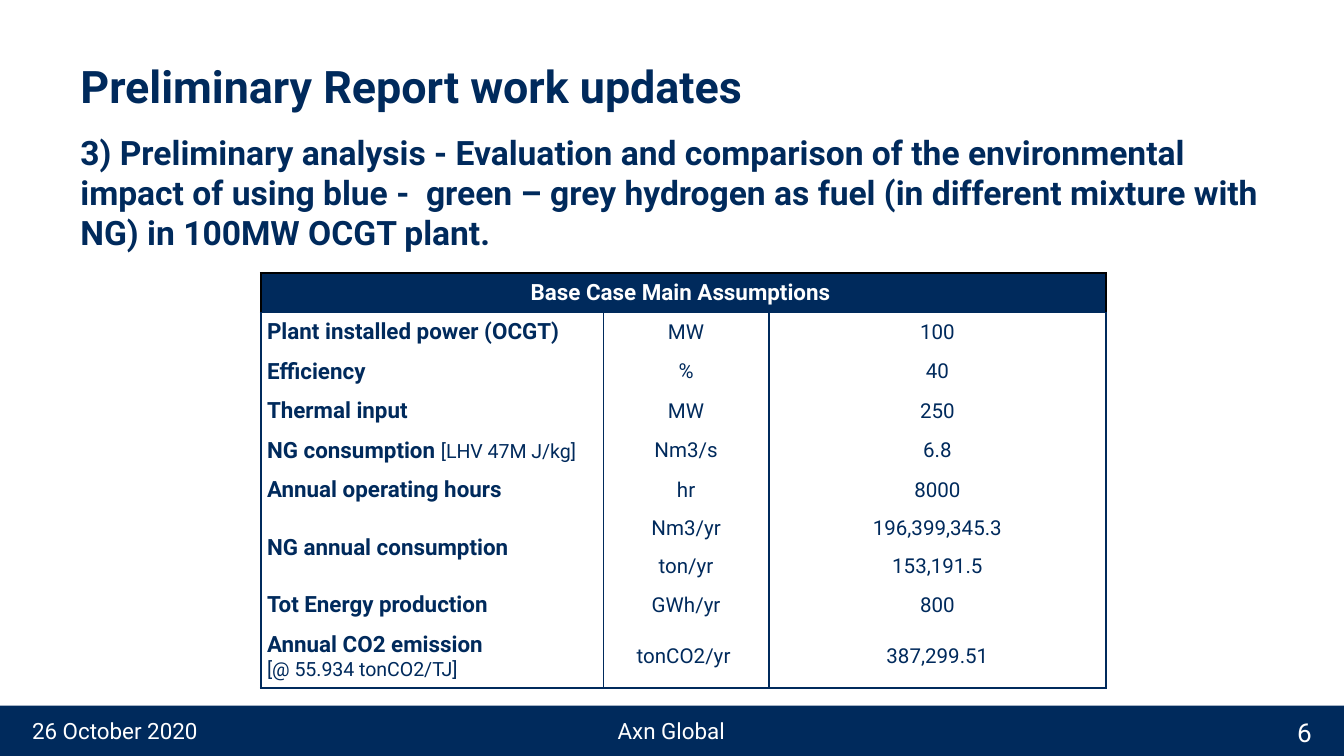
from lxml.etree import SubElement
from pptx import Presentation
from pptx.dml.color import RGBColor
from pptx.enum.shapes import MSO_SHAPE
from pptx.enum.text import MSO_ANCHOR, PP_ALIGN
from pptx.oxml.ns import qn
from pptx.util import Inches, Pt

FONT = "Roboto"
COLORS = {"navy": "002A5C", "white": "FFFFFF", "black": "000000"}

COLUMN_WIDTHS = [2.55, 1.23, 2.51]
ROW_HEIGHTS = [0.29] * 6 + [0.28] * 2 + [0.29, 0.47]
CELL_MARGIN = Pt(3.4)
TABLE_TITLE = "Base Case Main Assumptions "
# Label paragraphs (each a pair of bold text and plain text), unit, value
ASSUMPTIONS = [
    ([("Plant installed power (OCGT)", "")], "MW", "100"),
    ([("Efficiency", "")], "%", "40"),
    ([("Thermal input", "")], "MW", "250"),
    ([("NG consumption ", "[LHV 47M J/kg]")], "Nm3/s", "6.8"),
    ([("Annual operating hours", "")], "hr", "8000"),
    ([("NG annual consumption", "")], "Nm3/yr", "196,399,345.3"),
    ([], "ton/yr", "153,191.5"),
    ([("Tot Energy production", "")], "GWh/yr", "800"),
    ([("Annual CO2 emission", ""), ("", "[@ 55.934 tonCO2/TJ]")],
     "tonCO2/yr ", "387,299.51"),
]


def color(name):
    return RGBColor.from_string(COLORS[name])


def style_font(font, size, color_name="navy", bold=False):
    font.name = FONT
    font.size = Pt(size)
    font.bold = bold
    font.color.rgb = color(color_name)


def add_text(page, text, left, top, width, height, size, color_name="navy",
             bold=False, align=PP_ALIGN.LEFT, anchor=MSO_ANCHOR.MIDDLE):
    box = page.shapes.add_textbox(Inches(left), Inches(top), Inches(width), Inches(height))
    frame = box.text_frame
    frame.word_wrap = True
    frame.vertical_anchor = anchor
    para = frame.paragraphs[0]
    para.text = text
    para.alignment = align
    style_font(para.font, size, color_name, bold)


def add_footer(page):
    bar = page.shapes.add_shape(MSO_SHAPE.RECTANGLE, 0, Inches(5.25), Inches(10), Inches(0.38))
    bar.shadow.inherit = False
    bar.fill.solid()
    bar.fill.fore_color.rgb = color("navy")
    bar.line.fill.background()
    add_text(page, "Axn Global", 3.83, 5.25, 2.33, 0.37, 12, "white", align=PP_ALIGN.CENTER)
    add_text(page, "26 October 2020", 0.14, 5.25, 3.6, 0.37, 12, "white")
    add_text(page, "6", 7.33, 5.26, 2.53, 0.37, 14, "white", align=PP_ALIGN.RIGHT)


def set_borders(cell, borders):
    """Draw the sides named in borders (side: color name) and clear the others."""
    properties = cell._tc.get_or_add_tcPr()
    for side in "LRTB":
        line = SubElement(properties, qn(f"a:ln{side}"), w=str(Pt(1)))
        if side in borders:
            fill = SubElement(line, qn("a:solidFill"))
            SubElement(fill, qn("a:srgbClr"), val=COLORS[borders[side]])
        else:
            SubElement(line, qn("a:noFill"))


def format_cell(cell, borders, fill=None):
    cell.vertical_anchor = MSO_ANCHOR.MIDDLE
    cell.margin_left = cell.margin_right = CELL_MARGIN
    cell.margin_top = cell.margin_bottom = CELL_MARGIN
    set_borders(cell, borders)
    if fill:
        cell.fill.solid()
        cell.fill.fore_color.rgb = color(fill)
    else:
        cell.fill.background()


def write_centered(cell, text, size, color_name="navy", bold=False):
    para = cell.text_frame.paragraphs[0]
    para.text = text
    para.alignment = PP_ALIGN.CENTER
    style_font(para.font, size, color_name, bold)


def write_label(cell, lines):
    frame = cell.text_frame
    for index, (name, note) in enumerate(lines):
        para = frame.add_paragraph() if index else frame.paragraphs[0]
        for text, size, bold in ((name, 12, True), (note, 10.5, False)):
            if text:
                span = para.add_run()
                span.text = text
                style_font(span.font, size, bold=bold)


def add_assumptions_table(page):
    frame = page.shapes.add_table(
        len(ROW_HEIGHTS), len(COLUMN_WIDTHS), Inches(1.94), Inches(2.03),
        Inches(sum(COLUMN_WIDTHS)), Inches(sum(ROW_HEIGHTS)))
    table = frame.table
    table.first_row = table.horz_banding = False
    for column, width in zip(table.columns, COLUMN_WIDTHS):
        column.width = Inches(width)
    for row, height in zip(table.rows, ROW_HEIGHTS):
        row.height = Inches(height)

    # Header across all columns
    header_borders = {"L": "black", "R": "black", "T": "black", "B": "navy"}
    for cell in table.rows[0].cells:
        format_cell(cell, header_borders, "navy")
    table.cell(0, 0).merge(table.cell(0, 2))
    write_centered(table.cell(0, 0), TABLE_TITLE, 12, "white", True)

    # Body rows: vertical rules throughout, horizontal ones at the ends only
    for index, (label, unit, value) in enumerate(ASSUMPTIONS, start=1):
        sides = "LR"
        if index == 1:
            sides += "T"
        if index == len(ASSUMPTIONS):
            sides += "B"
        cells = list(table.rows[index].cells)
        for cell in cells:
            format_cell(cell, dict.fromkeys(sides, "navy"))
        write_label(cells[0], label)
        write_centered(cells[1], unit, 11)
        write_centered(cells[2], value, 11)
        if not label:
            table.cell(index - 1, 0).merge(cells[0])


def main():
    # Widescreen page, 16 by 9
    deck = Presentation()
    deck.slide_width = Inches(10)
    deck.slide_height = Inches(10) * 9 // 16
    page = deck.slides.add_slide(deck.slide_layouts[6])

    add_footer(page)

    # Title and introduction
    add_text(page, "Preliminary Report work updates", 0.5, 0.39, 9, 0.77, 24,
             bold=True, anchor=MSO_ANCHOR.TOP)
    add_text(page, "3) Preliminary analysis - Evaluation and comparison of the environmental "
             "impact of using blue -  green – grey hydrogen as fuel (in different mixture "
             "with NG) in 100MW OCGT plant.", 0.5, 1.26, 9, 0.67, 18,
             bold=True, anchor=MSO_ANCHOR.BOTTOM)

    add_assumptions_table(page)
    deck.save("out.pptx")


if __name__ == "__main__":
    main()
